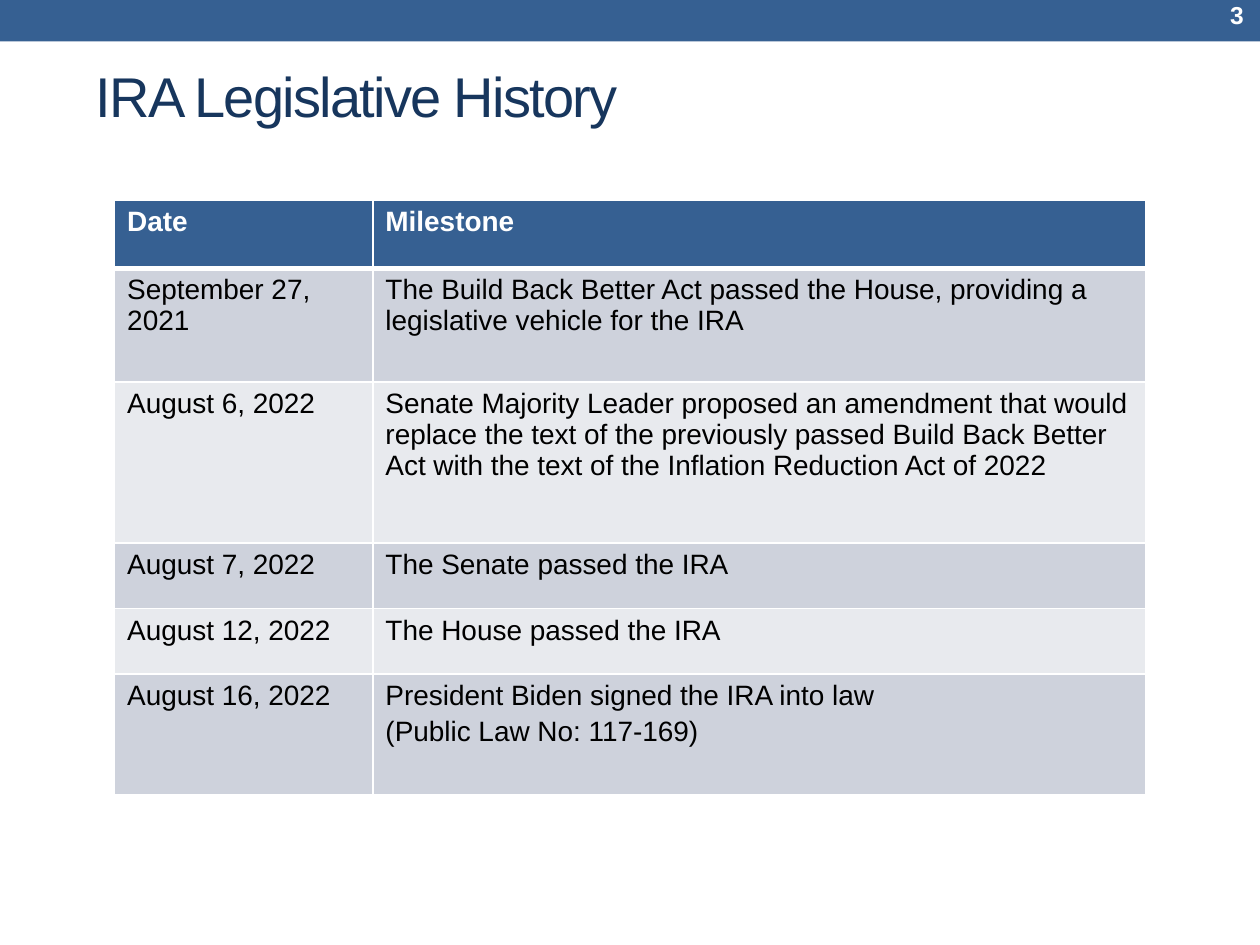
from pptx import Presentation
from pptx.dml.color import RGBColor
from pptx.enum import shapes, text
from pptx.oxml import parse_xml
from pptx.oxml.ns import nsdecls
from pptx.util import Inches, Pt

BLUE = RGBColor(0x36, 0x60, 0x92)
NAVY = RGBColor(0x17, 0x36, 0x5D)
BANDS = [RGBColor(0xCE, 0xD2, 0xDC), RGBColor(0xE8, 0xEA, 0xEE)]
WHITE = RGBColor(0xFF, 0xFF, 0xFF)
BLACK = RGBColor(0, 0, 0)
FONT = "Arial"

COLUMN_WIDTHS = [2.05, 6.13]
ROW_HEIGHTS = [0.54, 0.9, 1.28, 0.52, 0.52, 0.96]
MILESTONES = [
    ("Date", "Milestone"),
    ("September 27, 2021",
     "The Build Back Better Act passed the House, providing a legislative "
     "vehicle for the IRA"),
    ("August 6, 2022",
     "Senate Majority Leader proposed an amendment that would replace the text "
     "of the previously passed Build Back Better Act with the text of the "
     "Inflation Reduction Act of 2022"),
    ("August 7, 2022", "The Senate passed the IRA"),
    ("August 12, 2022", "The House passed the IRA"),
    ("August 16, 2022",
     "President Biden signed the IRA into law\n(Public Law No: 117-169)"),
]


def style(p, size, color, bold=False):
    p.font.name = FONT
    p.font.size = Pt(size)
    p.font.color.rgb = color
    p.font.bold = bold


def add_line(s, box, words, size, color, bold=False):
    """Add a vertically centred one-line text box and return its paragraph."""
    tf = s.shapes.add_textbox(*map(Inches, box)).text_frame
    tf.word_wrap = True
    tf.vertical_anchor = text.MSO_ANCHOR.MIDDLE
    p = tf.paragraphs[0]
    p.text = words
    style(p, size, color, bold)
    return p


def add_band(s, box):
    sp = s.shapes.add_shape(shapes.MSO_SHAPE.RECTANGLE, *map(Inches, box))
    sp.shadow.inherit = False
    sp.fill.solid()
    sp.fill.fore_color.rgb = BLUE
    sp.line.fill.background()


def add_title(s, box, words):
    p = add_line(s, box, words, 32, NAVY)
    p.runs[0].font._element.set("spc", "-100")


def add_page_number(s, box, number):
    p = add_line(s, box, number, 14, WHITE, bold=True)
    p.alignment = text.PP_ALIGN.RIGHT


def set_borders(cell, **widths):
    """Draw white cell borders, with widths in points keyed by side (L, R, T, B)."""
    tcPr = cell._tc.get_or_add_tcPr()
    for side, width in widths.items():
        tcPr.append(parse_xml(
            f'<a:ln{side} {nsdecls("a")} w="{Pt(width)}"><a:solidFill>'
            f'<a:srgbClr val="{WHITE}"/></a:solidFill></a:ln{side}>'))


def add_milestones(s, left, top):
    table = s.shapes.add_table(
        len(ROW_HEIGHTS), len(COLUMN_WIDTHS), Inches(left), Inches(top),
        Inches(sum(COLUMN_WIDTHS)), Inches(sum(ROW_HEIGHTS))).table
    for column, width in zip(table.columns, COLUMN_WIDTHS):
        column.width = Inches(width)
    for i, (row, height) in enumerate(zip(table.rows, ROW_HEIGHTS)):
        row.height = Inches(height)
        header = i == 0
        for cell, words in zip(row.cells, MILESTONES[i]):
            set_borders(cell, L=1, R=1, T=3 if i == 1 else 1, B=3 if header else 1)
            cell.fill.solid()
            cell.fill.fore_color.rgb = BLUE if header else BANDS[(i - 1) % 2]
            cell.text = words
            for p in cell.text_frame.paragraphs:
                style(p, 16, WHITE if header else BLACK, header)
                p.space_after = Pt(0 if header else 3)


def main():
    prs = Presentation()
    prs.slide_width, prs.slide_height = Inches(10), Inches(7.5)
    s = prs.slides.add_slide(prs.slide_layouts[6])
    add_band(s, (0, -0.07, 10, 0.4))
    add_title(s, (0.66, 0.27, 8.84, 0.97), "IRA Legislative History")
    add_milestones(s, 0.91, 1.59)
    add_page_number(s, (8.8, -0.06, 1.17, 0.36), "3")
    prs.save("out.pptx")


if __name__ == "__main__":
    main()
